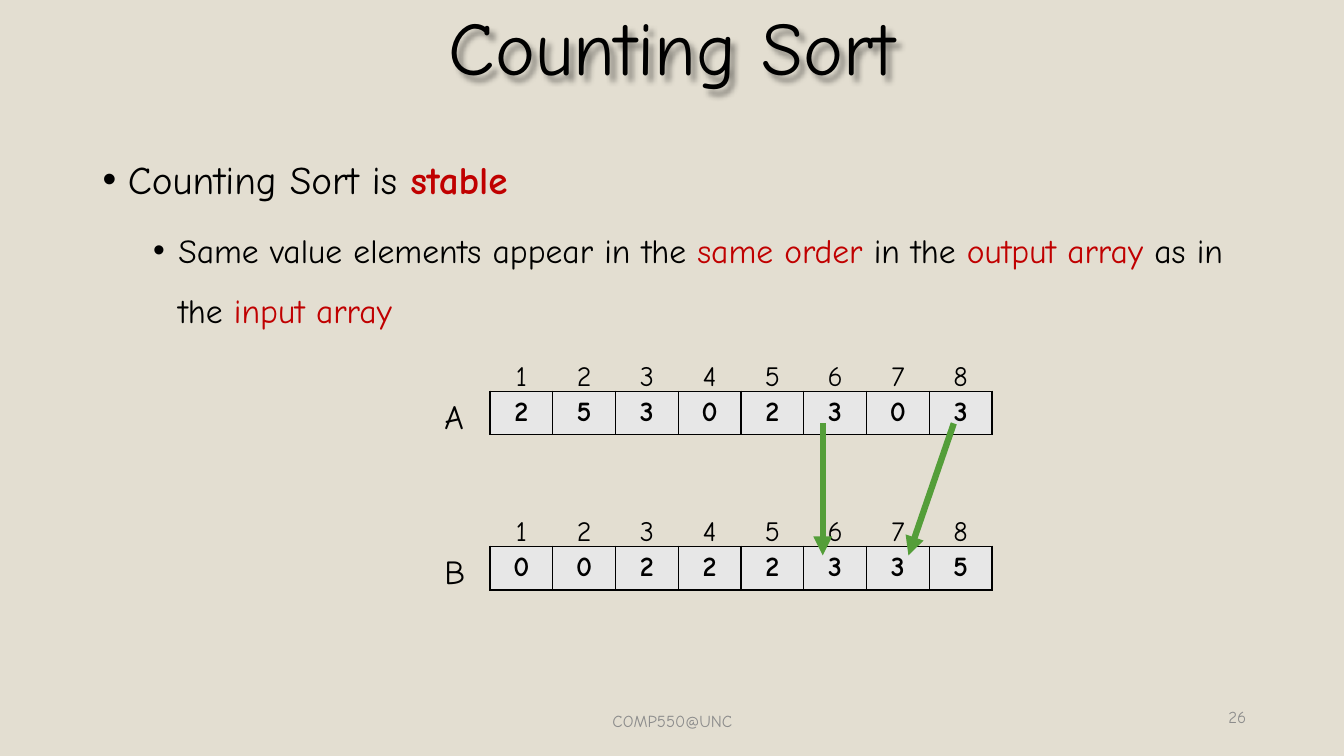
from dataclasses import dataclass

from lxml.etree import SubElement
from pptx import Presentation
from pptx.dml.color import RGBColor
from pptx.enum.shapes import MSO_CONNECTOR as Connector
from pptx.enum.text import MSO_ANCHOR as Anchor, PP_ALIGN as Align
from pptx.oxml.ns import qn
from pptx.util import Inches, Pt


@dataclass(frozen=True)
class Theme:
    font: str = "Comic Neue"
    background: str = "E3DED1"
    text: str = "000000"
    accent: str = "C00000"
    muted: str = "8C8C8C"
    cell: str = "E7E7E7"
    arrow: str = "549E39"
    title_size: int = 54
    bullet_size: int = 28
    detail_size: int = 24
    cell_size: int = 20
    footer_size: int = 12


THEME = Theme()
NO_STYLE = "{2D5ABB26-0587-4C30-8999-92F81FD0307C}"
ARRAY_LEFT, ARRAY_WIDTH, ROW_HEIGHT = 4.86, 4.98, 0.43
INDEX_OFFSET = 0.35  # index row sits this far above its array


def rgb(color):
    return RGBColor.from_string(color)


def set_font(font, size, color=THEME.text, bold=False):
    font.name = THEME.font
    font.size = Pt(size)
    font.bold = bold
    font.color.rgb = rgb(color)


def add_frame(slide, left, top, width, height, anchor=Anchor.TOP):
    box = slide.shapes.add_textbox(Inches(left), Inches(top), Inches(width), Inches(height))
    box.text_frame.word_wrap = True
    box.text_frame.vertical_anchor = anchor
    return box


def add_label(slide, text, position, size, color=THEME.text, align=Align.LEFT, anchor=Anchor.MIDDLE):
    box = add_frame(slide, *position, anchor)
    paragraph = box.text_frame.paragraphs[0]
    paragraph.text = text
    paragraph.alignment = align
    set_font(paragraph.font, size, color)
    return box


def add_title(slide, text):
    box = add_label(slide, text, (0, 0, 13.33, 1.02), THEME.title_size, align=Align.CENTER)
    box.text_frame.paragraphs[0].line_spacing = 0.9
    # Soft shadow behind the letters
    effects = SubElement(box._element.spPr, qn("a:effectLst"))
    shadow = SubElement(effects, qn("a:outerShdw"), blurRad=str(Pt(4)), dist=str(Pt(4)),
                        dir="2700000", algn="tl", rotWithShape="0")
    color = SubElement(shadow, qn("a:srgbClr"), val=THEME.text)
    SubElement(color, qn("a:alpha"), val="40000")


def write_bullet(paragraph, runs, size, indent, space_before):
    properties = paragraph._p.get_or_add_pPr()
    properties.set("marL", str(Inches(indent)))
    properties.set("indent", str(-Inches(0.25)))
    SubElement(properties, qn("a:buFont"), typeface="Arial")
    SubElement(properties, qn("a:buChar"), char="•")
    paragraph.line_spacing = 1.5
    paragraph.space_before = Pt(space_before)
    for text, color, bold in runs:
        run = paragraph.add_run()
        run.text = text
        set_font(run.font, size, color, bold)


def add_border(cell):
    properties = cell._tc.get_or_add_tcPr()
    for position, side in enumerate(("a:lnL", "a:lnR", "a:lnT", "a:lnB")):
        line = properties.makeelement(qn(side), {"w": str(Pt(1))})
        fill = SubElement(line, qn("a:solidFill"))
        SubElement(fill, qn("a:srgbClr"), val=THEME.text)
        properties.insert(position, line)


def add_row(slide, values, top, boxed):
    frame = slide.shapes.add_table(1, len(values), Inches(ARRAY_LEFT), Inches(top),
                                   Inches(ARRAY_WIDTH), Inches(ROW_HEIGHT))
    table = frame.table
    table.first_row = table.horz_banding = False
    table._tbl.tblPr.find(qn("a:tableStyleId")).text = NO_STYLE
    for cell, value in zip(table.iter_cells(), values):
        paragraph = cell.text_frame.paragraphs[0]
        paragraph.text = value
        paragraph.alignment = Align.CENTER
        set_font(paragraph.font, THEME.cell_size, bold=boxed)
        if boxed:
            cell.fill.solid()
            cell.fill.fore_color.rgb = rgb(THEME.cell)
            add_border(cell)
        else:
            cell.fill.background()


def add_array(slide, name, values, top):
    indexes = [str(index) for index in range(1, len(values) + 1)]
    add_row(slide, indexes, top - INDEX_OFFSET, boxed=False)
    add_row(slide, values, top, boxed=True)
    add_label(slide, name, (4.31, top, 0.37, 0.5), THEME.detail_size, anchor=Anchor.TOP)


def add_arrow(slide, start_x, end_x):
    arrow = slide.shapes.add_connector(Connector.STRAIGHT, Inches(start_x), Inches(4.2),
                                       Inches(end_x), Inches(5.51))
    arrow.line.color.rgb = rgb(THEME.arrow)
    arrow.line.width = Pt(4.5)
    SubElement(arrow.line._get_or_add_ln(), qn("a:tailEnd"), type="triangle")
    SubElement(arrow._element.spPr, qn("a:effectLst"))


def main():
    presentation = Presentation()
    presentation.slide_width, presentation.slide_height = Inches(13.33), Inches(7.5)
    slide = presentation.slides.add_slide(presentation.slide_layouts[6])
    slide.background.fill.solid()
    slide.background.fill.fore_color.rgb = rgb(THEME.background)

    # Title and footer
    add_title(slide, "Counting Sort")
    add_label(slide, "COMP550@UNC", (4.42, 6.95, 4.5, 0.4), THEME.footer_size,
              THEME.muted, Align.CENTER)
    add_label(slide, "26", (9.46, 6.91, 3, 0.4), THEME.footer_size, THEME.muted, Align.RIGHT)

    # Bullets
    body = add_frame(slide, 0.92, 1.26, 11.5, 5.49).text_frame
    write_bullet(body.paragraphs[0], [
        ("Counting Sort is ", THEME.text, False),
        ("stable", THEME.accent, True),
    ], THEME.bullet_size, indent=0.25, space_before=10)
    detail = body.add_paragraph()
    detail.level = 1
    write_bullet(detail, [
        ("Same value elements appear in the ", THEME.text, False),
        ("same order ", THEME.accent, False),
        ("in the ", THEME.text, False),
        ("output array ", THEME.accent, False),
        ("as in the ", THEME.text, False),
        ("input array", THEME.accent, False),
    ], THEME.detail_size, indent=0.75, space_before=5)

    # Input and output arrays
    add_array(slide, "A", "25302303", 3.88)
    add_array(slide, "B", "00222335", 5.42)

    # Equal values keep their order
    add_arrow(slide, 9.46, 9.01)
    add_arrow(slide, 8.16, 8.16)

    presentation.save("out.pptx")


if __name__ == "__main__":
    main()
